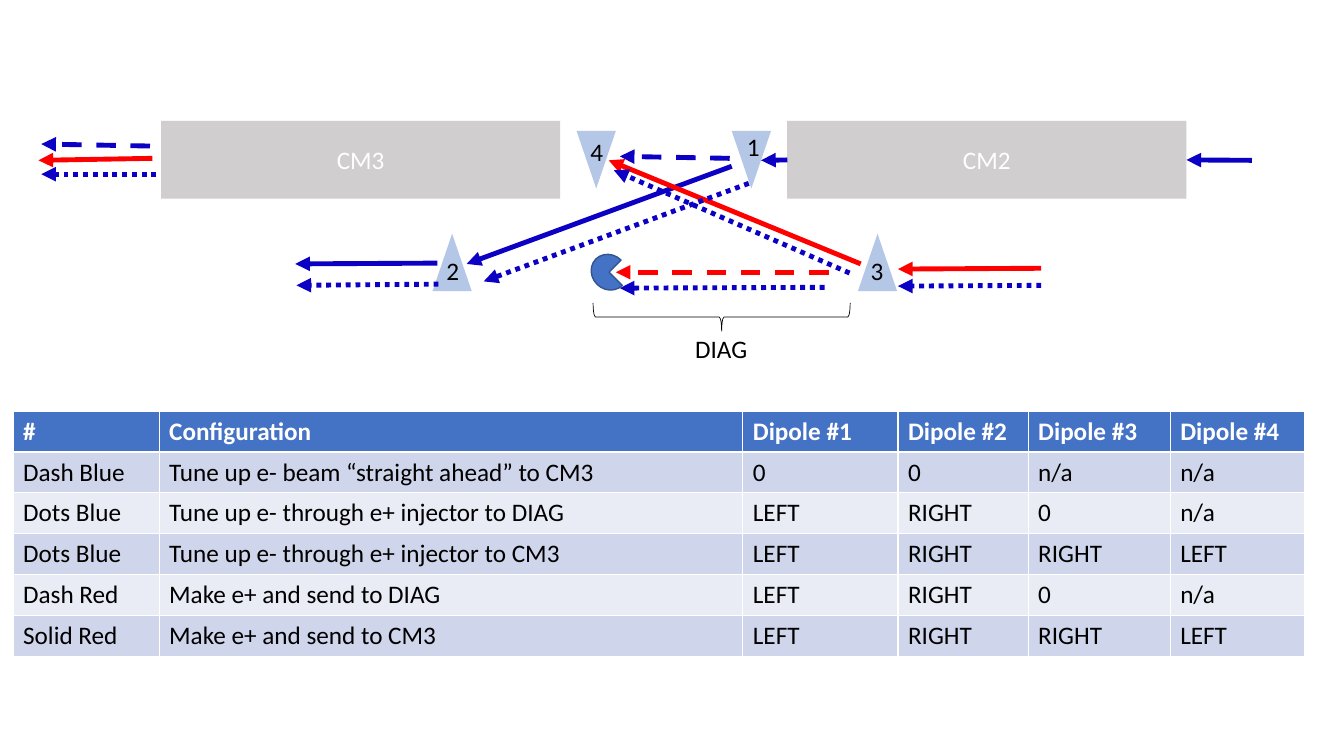
from typing import NamedTuple, Optional

from pptx import Presentation
from pptx.dml.color import RGBColor
from pptx.enum.dml import MSO_LINE
from pptx.enum.shapes import MSO_CONNECTOR, MSO_SHAPE
from pptx.enum.text import MSO_ANCHOR, MSO_AUTO_SIZE, PP_ALIGN
from pptx.oxml.ns import qn
from pptx.util import Cm, Pt
from lxml.etree import SubElement

WHITE = RGBColor(0xFF, 0xFF, 0xFF)
BLACK = RGBColor(0, 0, 0)
GRAY = RGBColor(0xD0, 0xCE, 0xCE)
PALE = RGBColor(0xB4, 0xC7, 0xE7)
ACCENT = RGBColor(0x44, 0x72, 0xC4)
EDGE = RGBColor(0x32, 0x54, 0x91)
BLUE = RGBColor(0x0C, 0x00, 0xC4)
RED = RGBColor(0xFF, 0, 0)
BANDS = (RGBColor(0xCF, 0xD5, 0xEA), RGBColor(0xE9, 0xEB, 0xF5))
DASH, DOTS = MSO_LINE.DASH, MSO_LINE.ROUND_DOT


class Part(NamedTuple):
    kind: MSO_SHAPE
    x: float
    y: float
    w: float
    h: float
    fill: Optional[RGBColor] = None
    turn: float = 0
    edge: Optional[RGBColor] = None
    width: float = 1
    text: str = ""


class Beam(NamedTuple):
    x1: float
    y1: float
    x2: float
    y2: float
    color: RGBColor
    dash: Optional[MSO_LINE] = None


class Label(NamedTuple):
    text: str
    x: float
    y: float
    w: float = 0.84


def module(name: str, x: float) -> Part:
    return Part(MSO_SHAPE.RECTANGLE, x, 3.05, 10.06, 1.96, GRAY, text=name)


def dipole(x: float, y: float, turn: float = 0) -> Part:
    return Part(MSO_SHAPE.ISOSCELES_TRIANGLE, x, y, 0.99, 1.45, PALE, turn)


CM2 = module("CM2", 19.84)
PARTS = [
    module("CM3", 4.06),
    dipole(18.44, 3.3, 180),
    dipole(14.53, 3.3, 180),
    dipole(10.9, 5.89),
    dipole(21.62, 5.89),
    Part(MSO_SHAPE.PIE, 14.88, 6.43, 0.94, 0.86, ACCENT, 44.7, EDGE),
    Part(MSO_SHAPE.RIGHT_BRACE, 17.83, 4.75, 0.71, 6.48, None, 90, BLACK, 0.5),
]
INPUT = Beam(31.55, 4.04, 29.9, 4.04, BLUE)
OUTPUT = Beam(19.84, 4.04, 19.18, 4.04, BLUE)
BEAMS = [
    Beam(18.44, 4.19, 11.76, 6.65, BLUE),
    Beam(11.02, 6.63, 7.44, 6.65, BLUE),
    Beam(21.69, 6.65, 15.34, 4.04, RED),
    Beam(3.84, 3.99, 0.97, 4.04, RED),
    Beam(26.24, 6.76, 22.63, 6.78, RED),
    Beam(20.88, 6.86, 15.52, 6.86, RED, DASH),
    Beam(18.39, 3.99, 15.62, 3.94, BLUE, DASH),
    Beam(3.78, 3.68, 1.04, 3.63, BLUE, DASH),
    Beam(18.87, 4.62, 12.19, 7.09, BLUE, DOTS),
    Beam(11.05, 7.16, 7.47, 7.19, BLUE, DOTS),
    Beam(26.24, 7.19, 22.63, 7.21, BLUE, DOTS),
    Beam(20.78, 7.24, 15.62, 7.26, BLUE, DOTS),
    Beam(21.41, 6.88, 15.47, 4.29, BLUE, DOTS),
    Beam(3.94, 4.39, 1.04, 4.39, BLUE, DOTS),
]
LABELS = [
    Label("1", 18.57, 3.18),
    Label("2", 11, 6.3),
    Label("3", 21.69, 6.3),
    Label("4", 14.63, 3.3),
    Label("DIAG", 17.27, 8.28, 1.83),
]
COLS = (3.68, 14.71, 3.91, 3.28, 3.58, 3.38)
ROWS = [
    ("#", "Configuration", "Dipole #1", "Dipole #2", "Dipole #3", "Dipole #4"),
    ("Dash Blue", "Tune up e- beam “straight ahead” to CM3", "0", "0", "n/a", "n/a"),
    ("Dots Blue", "Tune up e- through e+ injector to DIAG", "LEFT", "RIGHT", "0", "n/a"),
    ("Dots Blue", "Tune up e- through e+ injector to CM3", "LEFT", "RIGHT", "RIGHT", "LEFT"),
    ("Dash Red", "Make e+ and send to DIAG", "LEFT", "RIGHT", "0", "n/a"),
    ("Solid Red", "Make e+ and send to CM3", "LEFT", "RIGHT", "RIGHT", "LEFT"),
]


def write(frame, text: str, color: RGBColor, bold: bool = False) -> None:
    frame.text = text
    font = frame.paragraphs[0].runs[0].font
    font.name, font.size, font.bold = "Calibri", Pt(18), bold
    font.color.rgb = color


def add_part(slide, part: Part):
    shape = slide.shapes.add_shape(
        part.kind, Cm(part.x), Cm(part.y), Cm(part.w), Cm(part.h))
    shape.shadow.inherit = False
    shape.rotation = part.turn
    if part.fill is None:
        shape.fill.background()
    else:
        shape.fill.solid()
        shape.fill.fore_color.rgb = part.fill
    if part.edge is None:
        shape.line.fill.background()
    else:
        shape.line.color.rgb = part.edge
        shape.line.width = Pt(part.width)
    if part.text:
        write(shape.text_frame, part.text, WHITE)
        shape.text_frame.vertical_anchor = MSO_ANCHOR.MIDDLE
        shape.text_frame.paragraphs[0].alignment = PP_ALIGN.CENTER
    return shape


def add_beam(slide, beam: Beam):
    line = slide.shapes.add_connector(
        MSO_CONNECTOR.STRAIGHT,
        Cm(beam.x1), Cm(beam.y1), Cm(beam.x2), Cm(beam.y2))
    line.line.color.rgb = beam.color
    line.line.width = Pt(3.5)
    if beam.dash is not None:
        line.line.dash_style = beam.dash
    props = line._element.spPr
    SubElement(props.find(qn("a:ln")), qn("a:tailEnd"), type="triangle")
    SubElement(props, qn("a:effectLst"))
    return line


def add_label(slide, label: Label) -> None:
    box = slide.shapes.add_textbox(
        Cm(label.x), Cm(label.y), Cm(label.w), Cm(1.02))
    box.text_frame.word_wrap = False
    box.text_frame.auto_size = MSO_AUTO_SIZE.SHAPE_TO_FIT_TEXT
    write(box.text_frame, label.text, BLACK)


def add_grid(slide) -> None:
    table = slide.shapes.add_table(
        len(ROWS), len(COLS), Cm(0.33), Cm(10.36),
        Cm(sum(COLS)), Cm(1.03 * len(ROWS))).table
    for col, width in zip(table.columns, COLS):
        col.width = Cm(width)
    for r, row in enumerate(ROWS):
        head = r == 0
        for c, text in enumerate(row):
            cell = table.cell(r, c)
            cell.fill.solid()
            cell.fill.fore_color.rgb = ACCENT if head else BANDS[(r - 1) % 2]
            write(cell.text_frame, text, WHITE if head else BLACK, head)


def main() -> None:
    deck = Presentation()
    deck.slide_width, deck.slide_height = Cm(33.87), Cm(19.05)
    slide = deck.slides.add_slide(deck.slide_layouts[6])

    # Modules, dipoles, beam stop and brace
    source = add_part(slide, CM2)
    for part in PARTS:
        add_part(slide, part)

    # Beams into and out of CM2, then the free ones
    add_beam(slide, INPUT).end_connect(source, 3)
    add_beam(slide, OUTPUT).begin_connect(source, 1)
    for beam in BEAMS:
        add_beam(slide, beam)

    # Dipole numbers and brace caption
    for label in LABELS:
        add_label(slide, label)

    # Beam settings
    add_grid(slide)
    deck.save("out.pptx")


if __name__ == "__main__":
    main()
